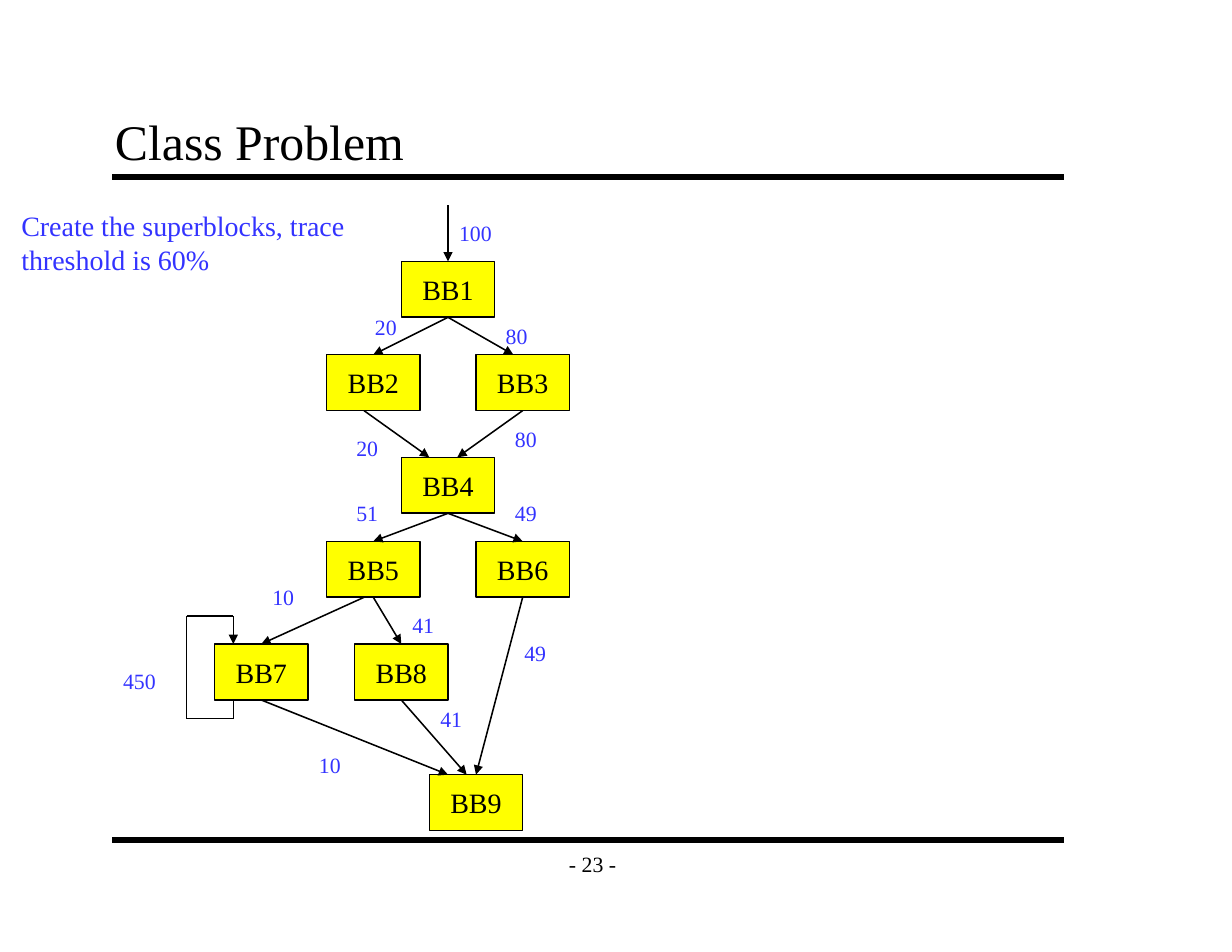
from lxml import etree
from pptx import Presentation
from pptx import util as u
from pptx.dml.color import RGBColor
from pptx.enum import shapes, text
from pptx.oxml.ns import qn

BLACK = RGBColor(0x00, 0x00, 0x00)
YELLOW = RGBColor(0xFF, 0xFF, 0x00)
BLUE = RGBColor(0x33, 0x33, 0xFF)
FONT = "Times New Roman"

# All positions count grid steps of a twelfth of an inch
STEP = u.Inches(1) / 12
BLOCK_WIDTH, BLOCK_HEIGHT = 10, 6

TITLE = "Class Problem"
TASK = ["Create the superblocks, trace", "threshold is 60%"]
PAGE_NUMBER = "- 23 -"

# Block name: column, row of its top left corner
BLOCKS = {
    "BB1": (43, 28), "BB2": (35, 38), "BB3": (51, 38),
    "BB4": (43, 49), "BB5": (35, 58), "BB6": (51, 58),
    "BB7": (23, 69), "BB8": (38, 69), "BB9": (46, 83),
}

# Source, steps along its bottom edge, target, steps along its top edge
EDGES = [
    ("BB1", 5, "BB2", 5), ("BB1", 5, "BB3", 4),
    ("BB2", 4, "BB4", 3), ("BB3", 5, "BB4", 6),
    ("BB4", 5, "BB5", 5), ("BB4", 5, "BB6", 5),
    ("BB5", 4, "BB7", 5), ("BB5", 5, "BB8", 5),
    ("BB7", 5, "BB9", 2), ("BB8", 5, "BB9", 4), ("BB6", 5, "BB9", 5),
]
ENTRY = [(48, 22), (48, 28)]
LOOP = [(25, 75), (25, 77), (20, 77), (20, 66), (25, 66), (25, 69)]

# Execution count, column, row
COUNTS = [
    ("100", 48, 23), ("20", 39, 33), ("80", 53, 34), ("20", 37, 46),
    ("80", 54, 45), ("51", 37, 53), ("49", 54, 53), ("10", 28, 62),
    ("41", 43, 65), ("49", 55, 68), ("450", 12, 71), ("41", 46, 75),
    ("10", 33, 80),
]


def grid(*steps):
    return [round(step * STEP) for step in steps]


def write(shape, lines, size, color, align=text.PP_ALIGN.LEFT,
          anchor=text.MSO_ANCHOR.TOP, wrap=False):
    frame = shape.text_frame
    frame.text = "\n".join(lines)
    frame.word_wrap = wrap
    frame.auto_size = text.MSO_AUTO_SIZE.NONE
    frame.vertical_anchor = anchor
    for para in frame.paragraphs:
        para.alignment = align
        for span in para.runs:
            span.font.name = FONT
            span.font.size = u.Pt(size)
            span.font.color.rgb = color


def set_insets(shape):
    frame = shape.text_frame
    frame.margin_left = frame.margin_right = u.Inches(0.11)
    frame.margin_top = frame.margin_bottom = u.Inches(0.06)


def add_line(page, start, end, width=1, arrow=False):
    line = page.shapes.add_connector(
        shapes.MSO_CONNECTOR.STRAIGHT, *grid(*start, *end))
    line.line.color.rgb = BLACK
    line.line.width = u.Pt(width)
    if arrow:
        etree.SubElement(line.line._get_or_add_ln(), qn("a:tailEnd"),
                         type="triangle")
    etree.SubElement(line._element.spPr, qn("a:effectLst"))


def add_path(page, points):
    """Join the points with lines; the last one carries the arrowhead."""
    last = len(points) - 2
    for index, (start, end) in enumerate(zip(points, points[1:])):
        add_line(page, start, end, arrow=index == last)


def add_block(page, name, column, row):
    block = page.shapes.add_shape(
        shapes.MSO_SHAPE.RECTANGLE,
        *grid(column, row, BLOCK_WIDTH, BLOCK_HEIGHT))
    block.shadow.inherit = False
    block.fill.solid()
    block.fill.fore_color.rgb = YELLOW
    block.line.color.rgb = BLACK
    block.line.width = u.Pt(1)
    write(block, [name], 18, BLACK, text.PP_ALIGN.CENTER,
          text.MSO_ANCHOR.MIDDLE)


def main():
    deck = Presentation()
    deck.slide_width, deck.slide_height = u.Inches(11), u.Inches(8.5)
    page = deck.slides.add_slide(deck.slide_layouts[5])

    # Rules above and below the content
    for row in (19, 90):
        add_line(page, (12, row), (114, row), width=4)

    # Title and page number
    title = page.shapes.title
    title.left, title.top, title.width, title.height = grid(11, 11, 102, 8)
    write(title, [TITLE], 32, BLACK, anchor=text.MSO_ANCHOR.BOTTOM, wrap=True)
    set_insets(title)
    number = page.shapes.add_textbox(*grid(59, 90, 9, 5))
    write(number, [PAGE_NUMBER], 14, BLACK, text.PP_ALIGN.CENTER,
          text.MSO_ANCHOR.MIDDLE)
    set_insets(number)

    # Control flow graph
    for name, (column, row) in BLOCKS.items():
        add_block(page, name, column, row)
    for source, leave, target, enter in EDGES:
        left, top = BLOCKS[source]
        target_left, target_top = BLOCKS[target]
        add_path(page, [(left + leave, top + BLOCK_HEIGHT),
                        (target_left + enter, target_top)])
    add_path(page, ENTRY)
    add_path(page, LOOP)

    # Execution counts
    for count, column, row in COUNTS:
        label = page.shapes.add_textbox(*grid(column, row, 2 + 1.3 * len(count), 4))
        write(label, [count], 14, BLUE)

    # Task
    task = page.shapes.add_textbox(*grid(1.1, 21.75, 37, 8.4))
    write(task, TASK, 18, BLUE)

    deck.save("out.pptx")


if __name__ == "__main__":
    main()
